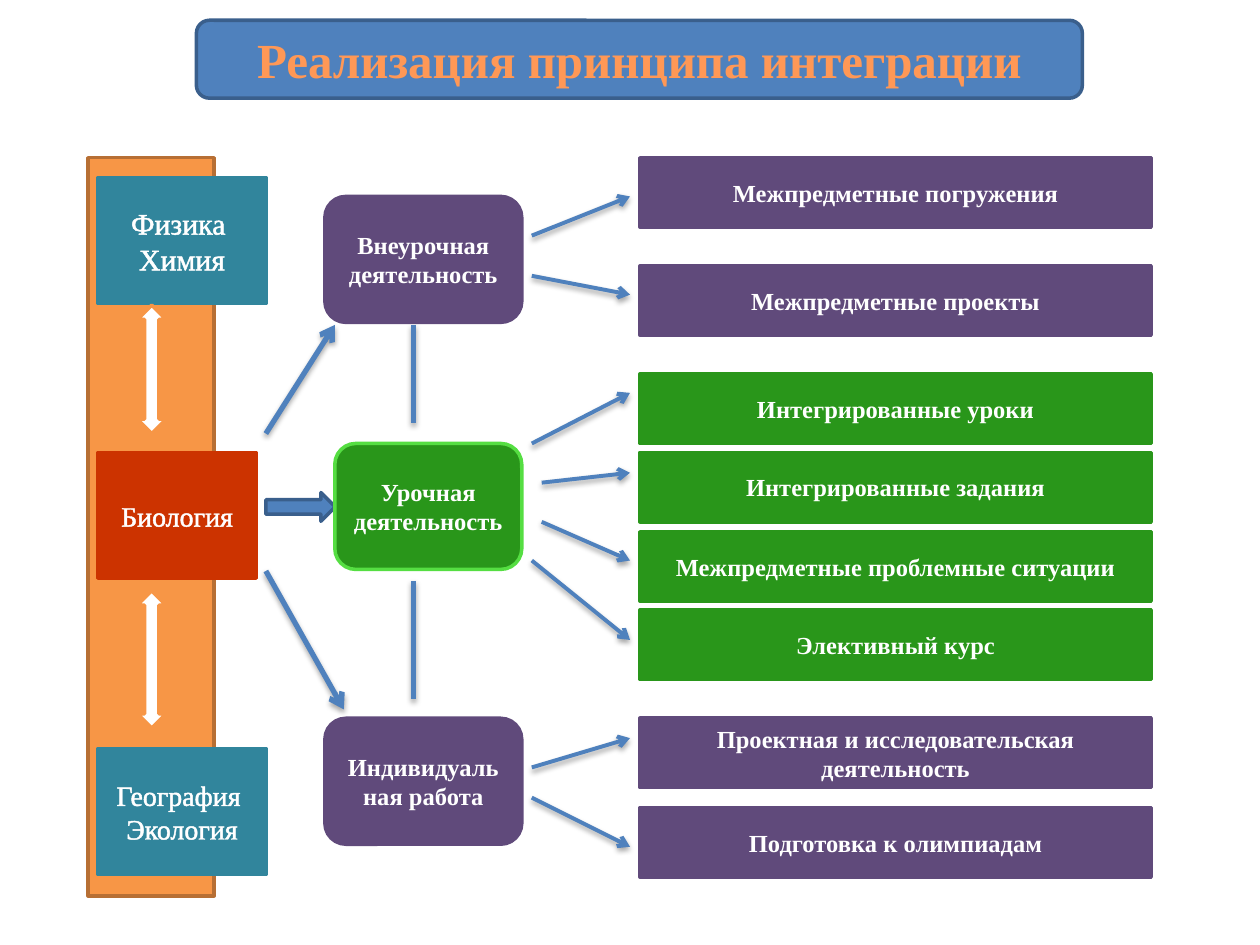
import pptx
import pptx.util
import pptx.dml.color
import pptx.enum.shapes
import pptx.enum.text
import pptx.oxml
import pptx.oxml.ns

Cm = pptx.util.Cm
Pt = pptx.util.Pt
SHAPE = pptx.enum.shapes.MSO_SHAPE
NS = pptx.oxml.ns.nsdecls("a")

BLUE, BLUE_EDGE = "4F81BD", "3A5F8C"
ORANGE, ORANGE_EDGE = "F79646", "B76F34"
TEAL, RED, WHITE = "31859C", "CC3300", "FFFFFF"
PURPLE, GREEN, GREEN_EDGE = "604A7B", "29961A", "55DE42"

SHADOW = (
    f'<a:effectLst {NS}><a:outerShdw blurRad="40000" dist="23000" dir="5400000" '
    'rotWithShape="0"><a:srgbClr val="000000"><a:alpha val="35000"/>'
    '</a:srgbClr></a:outerShdw></a:effectLst>'
)
TEXT_OUTLINE = (
    f'<a:ln {NS} w="18415"><a:solidFill><a:srgbClr val="FFFFFF"/></a:solidFill></a:ln>'
)


def rgb(value):
    return pptx.dml.color.RGBColor.from_string(value)


def add_block(s, kind, x, y, w, h, fill, edge=None):
    sp = s.shapes.add_shape(kind, Cm(x), Cm(y), Cm(w), Cm(h))
    sp.shadow.inherit = False
    sp.fill.solid()
    sp.fill.fore_color.rgb = rgb(fill)
    sp.line.color.rgb = rgb(edge or fill)
    sp.line.width = Pt(2)
    return sp


def set_text(sp, text, size=14, color=WHITE, bold=True, outline=False):
    tf = sp.text_frame
    tf.word_wrap = True
    tf.vertical_anchor = pptx.enum.text.MSO_ANCHOR.MIDDLE
    tf.text = text
    for p in tf.paragraphs:
        p.alignment = pptx.enum.text.PP_ALIGN.CENTER
        for r in p.runs:
            r.font.name = "Times New Roman"
            r.font.size = Pt(size)
            r.font.bold = bold
            r.font.color.rgb = rgb(color)
            if outline:
                r.font._element.insert(0, pptx.oxml.parse_xml(TEXT_OUTLINE))


def add_link(s, x1, y1, x2, y2, width, arrow=True):
    line = s.shapes.add_connector(
        pptx.enum.shapes.MSO_CONNECTOR.STRAIGHT, Cm(x1), Cm(y1), Cm(x2), Cm(y2))
    line.line.color.rgb = rgb(BLUE)
    line.line.width = Pt(width)
    if arrow:
        line.line._get_or_add_ln().append(
            pptx.oxml.parse_xml(f'<a:tailEnd {NS} type="arrow"/>'))
    line._element.spPr.append(pptx.oxml.parse_xml(SHADOW))


def add_title(s, x, y, w, h):
    sp = add_block(s, SHAPE.ROUNDED_RECTANGLE, x, y, w, h, BLUE, BLUE_EDGE)
    set_text(sp, "Реализация принципа интеграции", 28, "FF9856")


def add_subjects(s, x, y, w, h):
    add_block(s, SHAPE.RECTANGLE, x, y, w, h, ORANGE, ORANGE_EDGE)
    subjects = [
        ("Физика \nХимия", 0.4, 3.38, TEAL, 17),
        ("Биология", 5.94, 3.18, RED, 16),
        ("География \nЭкология", 11.91, 3.38, TEAL, 16),
    ]
    for text, dy, width, fill, size in subjects:
        sp = add_block(s, SHAPE.RECTANGLE, x + 0.2, y + dy, width, 2.54, fill)
        set_text(sp, text, size, bold=False, outline=True)
    for dy, height in [(2.97, 2.59), (8.73, 2.77)]:
        add_block(s, SHAPE.UP_DOWN_ARROW, x + 0.99, y + dy, 0.58, height, WHITE, ORANGE)


def add_activities(s, x, y, w, h):
    add_block(s, SHAPE.RIGHT_ARROW, x - 1.19, y + 5.97, 1.4, 0.58, BLUE, BLUE_EDGE)
    activities = [
        ("Урочная деятельность", 0.2, 4.98, GREEN, GREEN_EDGE),
        ("Внеурочная деятельность", 0, 0, PURPLE, PURPLE),
        ("Индивидуальная работа", 0, h - 2.54, PURPLE, PURPLE),
    ]
    for text, dx, dy, fill, edge in activities:
        sp = add_block(s, SHAPE.ROUNDED_RECTANGLE, x + dx, y + dy, w - dx, 2.54, fill, edge)
        set_text(sp, text)
    links = [
        (-1.19, 4.78, 0.2, 2.59, True),
        (-1.19, 7.55, 0.38, 10.34, True),
        (1.78, 2.59, 1.78, 4.57, False),
        (1.78, 7.75, 1.78, 10.14, False),
    ]
    for x1, y1, x2, y2, arrow in links:
        add_link(s, x + x1, y + y1, x + x2, y + y2, 3, arrow)


def add_results(s, x, y, w, h):
    results = [
        ("Межпредметные погружения", 0, PURPLE, 2.18, 1.57, 0.78),
        ("Межпредметные проекты", 2.18, PURPLE, 2.18, 2.38, 2.76),
        ("Интегрированные уроки", 4.36, GREEN, 2.18, 5.76, 4.74),
        ("Интегрированные задания", 5.94, GREEN, 1.98, 6.55, 6.35),
        ("Межпредметные проблемные ситуации", 7.54, GREEN, 1.98, 7.34, 8.12),
        ("Элективный курс", 9.12, GREEN, 2.18, 8.12, 9.72),
        ("Проектная и исследовательская деятельность", 11.3, PURPLE, 2.18, 12.29, 11.7),
        ("Подготовка к олимпиадам", h - 1.4, PURPLE, 2.18, 12.9, 13.89),
    ]
    for text, dy, fill, reach, start, end in results:
        add_link(s, x - reach, y + start, x - 0.2, y + end, 2.25)
        sp = add_block(s, SHAPE.RECTANGLE, x, y + dy, w, 1.4, fill)
        set_text(sp, text)


def main():
    prs = pptx.Presentation()
    prs.slide_width, prs.slide_height = Cm(25.4), Cm(19.05)
    s = prs.slides.add_slide(prs.slide_layouts[6])
    add_title(s, 3.96, 0.41, 17.86, 1.57)
    add_subjects(s, 1.78, 3.18, 2.54, 14.88)
    add_activities(s, 6.55, 3.96, 3.97, 13.06)
    add_results(s, 12.9, 3.18, 10.31, 14.5)
    prs.save("out.pptx")


if __name__ == "__main__":
    main()
